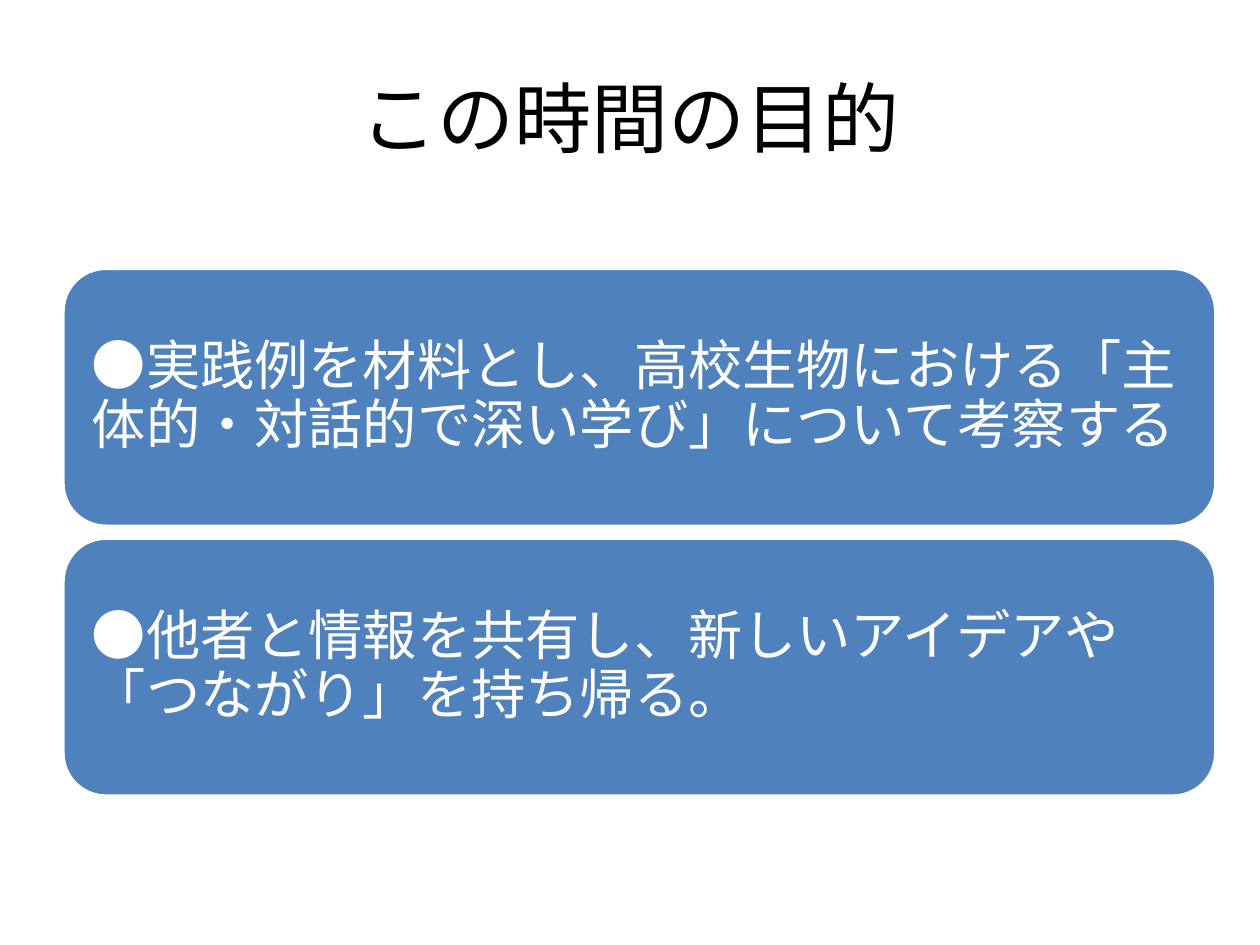
from dataclasses import dataclass

from lxml.etree import SubElement
from pptx import Presentation
from pptx.dml.color import RGBColor
from pptx.enum.shapes import MSO_SHAPE
from pptx.enum.text import MSO_ANCHOR, PP_ALIGN
from pptx.oxml.ns import qn
from pptx.util import Cm, Pt

HEADING = "この時間の目的"
PURPOSES = [
    "●実践例を材料とし、高校生物における「主体的・対話的で深い学び」について考察する",
    "●他者と情報を共有し、新しいアイデアや「つながり」を持ち帰る。",
]


@dataclass(frozen=True)
class Theme:
    font: str = "Karla"
    heading_color: RGBColor = RGBColor(0x00, 0x00, 0x00)
    panel_fill: RGBColor = RGBColor(0x4F, 0x81, 0xBD)
    panel_text: RGBColor = RGBColor(0xFF, 0xFF, 0xFF)
    panel_line: RGBColor = RGBColor(0xFF, 0xFF, 0xFF)
    heading_size: int = 44
    panel_size: int = 31


THEME = Theme()
LEFT = 1.27
PANEL_TOP, PANEL_WIDTH, PANEL_HEIGHT, PANEL_GAP = 5.41, 23.24, 5.2, 0.24


def write(shape, text, *, size, color, align=PP_ALIGN.LEFT, spacing=1.0, inset=0.25):
    frame = shape.text_frame
    frame.word_wrap = True
    frame.vertical_anchor = MSO_ANCHOR.MIDDLE
    frame.margin_left = frame.margin_right = Cm(inset)
    frame.margin_top = frame.margin_bottom = Cm(inset)
    paragraph = frame.paragraphs[0]
    paragraph.alignment = align
    paragraph.line_spacing = spacing
    run = paragraph.add_run()
    run.text = text
    run.font.size = Pt(size)
    run.font.color.rgb = color
    run.font.name = THEME.font
    # Japanese characters take the East Asian typeface
    SubElement(run.font._element, qn("a:ea"), typeface=THEME.font)


def add_panel(slide, top, purpose):
    panel = slide.shapes.add_shape(
        MSO_SHAPE.ROUNDED_RECTANGLE,
        Cm(LEFT), Cm(top), Cm(PANEL_WIDTH), Cm(PANEL_HEIGHT),
    )
    panel.shadow.inherit = False
    panel.fill.solid()
    panel.fill.fore_color.rgb = THEME.panel_fill
    panel.line.color.rgb = THEME.panel_line
    panel.line.width = Pt(2)
    write(panel, purpose, size=THEME.panel_size, color=THEME.panel_text,
          spacing=0.9, inset=0.33)


def main():
    deck = Presentation()
    deck.slide_width, deck.slide_height = Cm(25.4), Cm(19.05)
    slide = deck.slides.add_slide(deck.slide_layouts[6])

    heading = slide.shapes.add_textbox(Cm(LEFT), Cm(0.76), Cm(22.86), Cm(3.18))
    write(heading, HEADING, size=THEME.heading_size, color=THEME.heading_color,
          align=PP_ALIGN.CENTER)

    for row, purpose in enumerate(PURPOSES):
        add_panel(slide, PANEL_TOP + row * (PANEL_HEIGHT + PANEL_GAP), purpose)

    deck.save("out.pptx")


if __name__ == "__main__":
    main()
